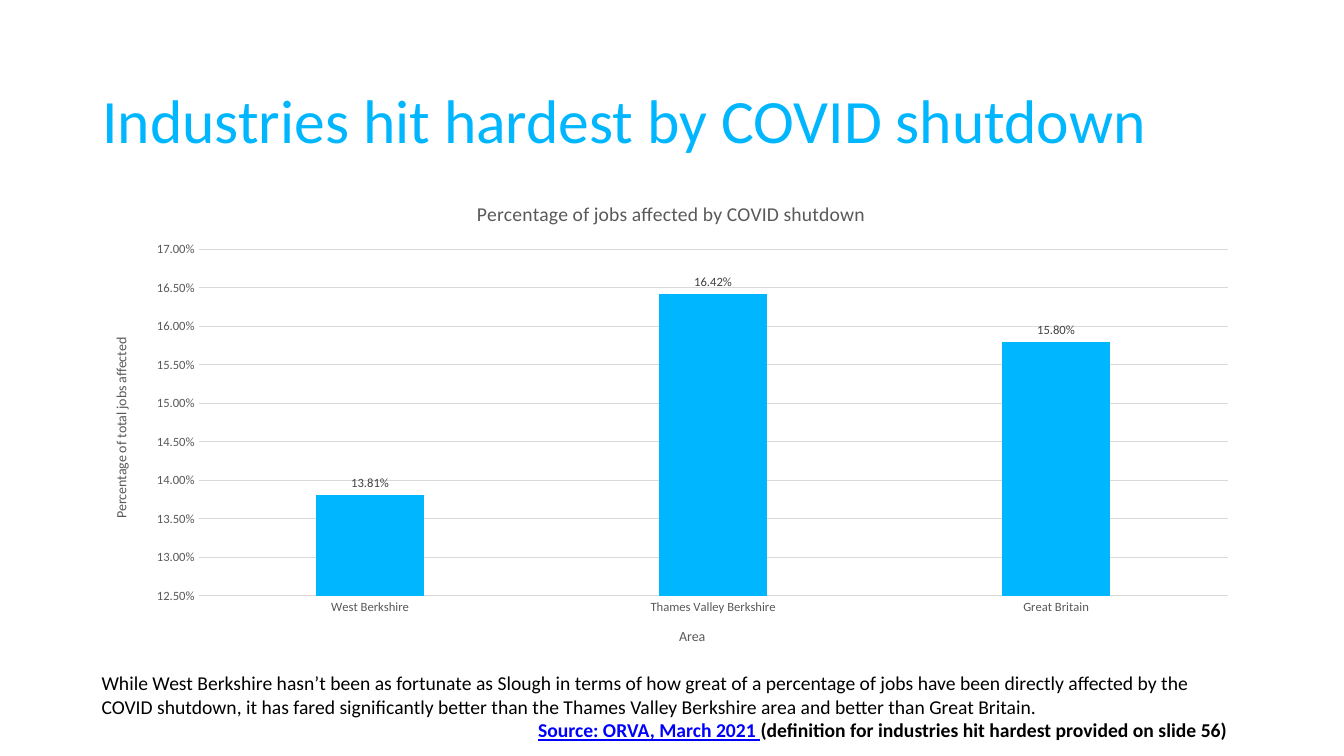
import pptx
import pptx.util
import pptx.chart.data
import pptx.dml.color
import pptx.enum.chart
import pptx.enum.text

Cm, Pt = pptx.util.Cm, pptx.util.Pt
COLORS = {"accent": "00B7FF", "text": "000000", "source": "0000FF",
          "axis": "595959", "label": "404040", "grid": "D9D9D9"}
LEFT, WIDTH = 2.31, 29.21


def rgb(name):
    return pptx.dml.color.RGBColor.from_string(COLORS[name])


def apply(obj, values):
    for name, value in values.items():
        setattr(obj, name, value)


class Deck:
    """Holds the style and the current slide."""

    font_name = "Calibri"

    def __init__(self, width, height):
        self.prs = pptx.Presentation()
        apply(self.prs, {"slide_width": Cm(width), "slide_height": Cm(height)})
        self.slide = None

    def add_slide(self):
        self.slide = self.prs.slides.add_slide(self.prs.slide_layouts[5])

    def style(self, font, size, color, **extra):
        apply(font, {"name": self.font_name, "size": Pt(size), "bold": False, **extra})
        font.color.rgb = rgb(color)

    def run(self, p, text, size, color, **extra):
        r = p.add_run()
        r.text = text
        self.style(r.font, size, color, **extra)

    def place(self, sp, left, top, width, height):
        apply(sp, {"left": Cm(left), "top": Cm(top),
                   "width": Cm(width), "height": Cm(height)})

    def title(self, text, box):
        sp = self.slide.shapes.title
        self.place(sp, *box)
        tf = sp.text_frame
        apply(tf, {"word_wrap": True,
                   "vertical_anchor": pptx.enum.text.MSO_ANCHOR.MIDDLE})
        p = tf.paragraphs[0]
        apply(p, {"alignment": pptx.enum.text.PP_ALIGN.LEFT, "line_spacing": 0.9})
        self.run(p, text, 44, "accent")

    def text(self, paragraphs, box):
        """Each paragraph is an indent in cm and a list of formatted runs."""
        sp = self.slide.shapes.add_textbox(*map(Cm, box))
        tf = sp.text_frame
        tf.word_wrap = True
        for i, (indent, runs) in enumerate(paragraphs):
            p = tf.add_paragraph() if i else tf.paragraphs[0]
            p._p.get_or_add_pPr().set("marL", str(Cm(indent)))
            for text, color, extra in runs:
                self.run(p, text, 14, color, **extra)

    def chart_title(self, owner, text, size):
        tf = owner.text_frame
        self.run(tf.paragraphs[0], text, size, "axis")

    def column_chart(self, title, cat_title, val_title, data, scale, box):
        chart_data = pptx.chart.data.CategoryChartData(number_format="0.00%")
        chart_data.categories = list(data)
        chart_data.add_series("Series 1", list(data.values()))
        chart = self.slide.shapes.add_chart(
            pptx.enum.chart.XL_CHART_TYPE.COLUMN_CLUSTERED,
            *map(Cm, box), chart_data).chart
        apply(chart, {"has_legend": False, "has_title": True})
        self.style(chart.font, 10, "text")
        self.chart_title(chart.chart_title, title, 14)
        chart.chart_title.include_in_layout = False

        # Axes
        cat, val = chart.category_axis, chart.value_axis
        for axis, text in ((cat, cat_title), (val, val_title)):
            axis.major_tick_mark = pptx.enum.chart.XL_TICK_MARK.NONE
            self.style(axis.tick_labels.font, 9, "axis")
            self.chart_title(axis.axis_title, text, 10)
        apply(val, {**scale, "has_major_gridlines": True})
        apply(val.tick_labels, {"number_format": "0.00%",
                                "number_format_is_linked": False})
        val.format.line.fill.background()
        for line in (cat.format.line, val.major_gridlines.format.line):
            line.width = Pt(0.75)
            line.color.rgb = rgb("grid")

        # Columns and value labels
        plot = chart.plots[0]
        apply(plot, {"gap_width": 219, "overlap": -27, "vary_by_categories": False})
        series = plot.series[0]
        series.format.fill.solid()
        series.format.fill.fore_color.rgb = rgb("accent")
        labels = series.data_labels
        apply(labels, {"show_value": True, "number_format": "0.00%",
                       "number_format_is_linked": False,
                       "position": pptx.enum.chart.XL_LABEL_POSITION.OUTSIDE_END})
        self.style(labels.font, 9, "label")


def main():
    deck = Deck(33.87, 19.05)
    deck.add_slide()

    # Heading
    deck.title("Industries hit hardest by COVID shutdown", (2.33, 1.55, WIDTH, 3.15))

    # Commentary and source
    deck.text([
        (0, [("While West Berkshire hasn’t been as fortunate as Slough in terms of how "
              "great of a percentage of jobs have been directly affected by the COVID "
              "shutdown, it has fared significantly better than the Thames Valley "
              "Berkshire area and better than Great Britain.", "text", {})]),
        (11, [("Source: ORVA, March 2021 ", "source", {"bold": True, "underline": True}),
              ("(definition for industries hit hardest provided on slide 56)",
               "text", {"bold": True})]),
    ], (LEFT, 16.79, WIDTH, 2.06))

    # Share of jobs by area
    deck.column_chart(
        "Percentage of jobs affected by COVID shutdown",
        "Area", "Percentage of total jobs affected",
        {"West Berkshire": 0.1381, "Thames Valley Berkshire": 0.1642,
         "Great Britain": 0.158},
        {"minimum_scale": 0.125, "maximum_scale": 0.17, "major_unit": 0.005},
        (LEFT, 4.57, WIDTH, 12.19))

    deck.prs.save("out.pptx")


if __name__ == "__main__":
    main()
